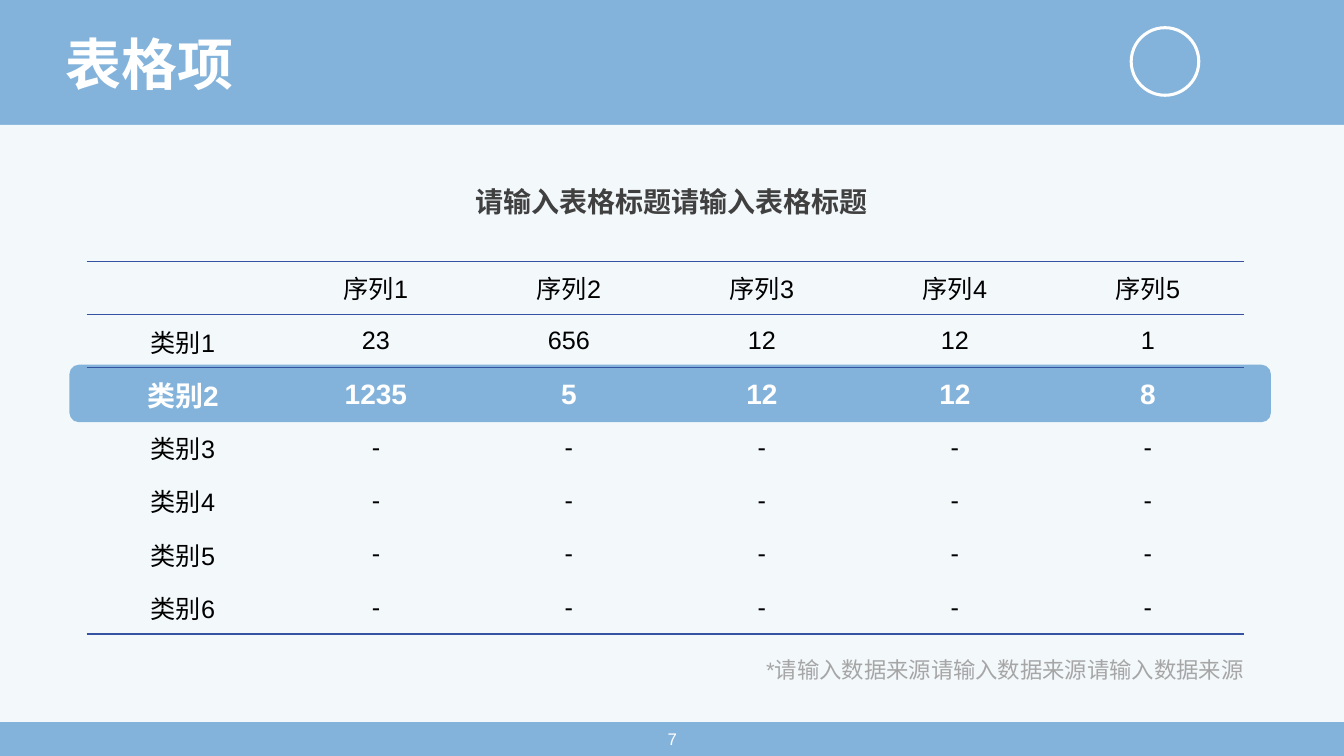
from lxml.etree import SubElement
from pptx import Presentation
from pptx.dml.color import RGBColor
from pptx.enum.shapes import MSO_SHAPE as Shape
from pptx.enum.text import MSO_ANCHOR as Anchor, PP_ALIGN as Align
from pptx.oxml.ns import qn
from pptx.util import Cm, Pt

BLUE = RGBColor(0x83, 0xB3, 0xDB)
RULE = RGBColor(0x35, 0x53, 0xA0)
WHITE = RGBColor(0xFF, 0xFF, 0xFF)
BLACK = RGBColor(0x00, 0x00, 0x00)
DARK_GRAY = RGBColor(0x40, 0x40, 0x40)
LIGHT_GRAY = RGBColor(0xA6, 0xA6, 0xA6)
LATIN_FONT = "Arial"
CHINESE_FONT = "Noto Sans CJK SC"
PLAIN_TABLE_STYLE = "{2D5ABB26-0587-4C30-8999-92F81FD0307C}"

HEADERS = [""] + [f"序列{number}" for number in range(1, 6)]
FILLED_ROWS = [
    ["类别1", "23", "656", "12", "12", "1"],
    ["类别2", "1235", "5", "12", "12", "8"],
]
EMPTY_ROWS = [[f"类别{number}"] + ["-"] * 5 for number in range(3, 7)]
ROWS = [HEADERS] + FILLED_ROWS + EMPTY_ROWS
HIGHLIGHT_ROW = 2


def place(shape, left, top, width, height):
    """Move and size a shape, in centimetres."""
    shape.left, shape.top = Cm(left), Cm(top)
    shape.width, shape.height = Cm(width), Cm(height)


def write(text_frame, text, size, color, align, bold=False, font_name=LATIN_FONT):
    """Fill a text frame with one formatted paragraph."""
    paragraph = text_frame.paragraphs[0]
    paragraph.text = text
    paragraph.alignment = align
    font = paragraph.font
    font.name, font.size, font.bold = font_name, Pt(size), bold
    font.color.rgb = color
    return paragraph


def add_title(slide, text):
    """Put the slide title in its placeholder."""
    title = slide.shapes.title
    place(title, 1.4, 0.86, 18.19, 1.65)
    title.text_frame.vertical_anchor = Anchor.MIDDLE
    paragraph = write(title.text_frame, text, 40, WHITE, Align.LEFT, True, CHINESE_FONT)
    paragraph.line_spacing = 0.9


def add_block(slide, kind, color, left, top, width, height):
    """Add a flat, unlined preset shape."""
    block = slide.shapes.add_shape(kind, Cm(left), Cm(top), Cm(width), Cm(height))
    block.shadow.inherit = False
    block.fill.solid()
    block.fill.fore_color.rgb = color
    block.line.fill.background()
    return block


def set_opacity(shape, percent):
    """Make a solid fill partly transparent."""
    color = shape.element.spPr.find(qn("a:solidFill"))[0]
    SubElement(color, qn("a:alpha"), val=str(percent * 1000))


def add_text(slide, text, box, size, color, align, bold=False):
    """Add a wrapped, vertically centred text box."""
    text_box = slide.shapes.add_textbox(0, 0, 0, 0)
    place(text_box, *box)
    text_box.text_frame.word_wrap = True
    text_box.text_frame.vertical_anchor = Anchor.MIDDLE
    write(text_box.text_frame, text, size, color, align, bold)


def add_border(cell, side):
    """Draw a one-point rule on one side of a cell."""
    properties = cell._tc.get_or_add_tcPr()
    line = SubElement(properties, qn(f"a:ln{side}"), w=str(Pt(1)))
    fill = SubElement(line, qn("a:solidFill"))
    SubElement(fill, qn("a:srgbClr"), val=str(RULE))


def add_data_table(slide, rows):
    """Add the ruled table with one emphasised row."""
    frame = slide.shapes.add_table(
        len(rows), len(rows[0]), Cm(2.18), Cm(6.58), Cm(29.18), Cm(9.4)
    )
    next(frame.element.iter(qn("a:tableStyleId"))).text = PLAIN_TABLE_STYLE
    table = frame.table
    table.first_row = table.horz_banding = False
    borders = {0: "TB", 1: "T", len(rows) - 1: "B"}
    for row_index, row in enumerate(rows):
        highlighted = row_index == HIGHLIGHT_ROW
        size, color = (20, WHITE) if highlighted else (18, BLACK)
        for column_index, text in enumerate(row):
            cell = table.cell(row_index, column_index)
            cell.vertical_anchor = Anchor.MIDDLE
            for side in borders.get(row_index, ""):
                add_border(cell, side)
            cell.fill.background()
            write(cell.text_frame, text, size, color, Align.CENTER, highlighted)


def main():
    """Build and save the table slide."""
    presentation = Presentation()
    presentation.slide_width, presentation.slide_height = Cm(33.87), Cm(19.05)
    slide = presentation.slides.add_slide(presentation.slide_layouts[5])
    slide.background.fill.solid()
    slide.background.fill.fore_color.rgb = BLUE

    panel = add_block(slide, Shape.RECTANGLE, WHITE, 0, 3.15, 33.87, 15.04)
    set_opacity(panel, 91)
    emblem = add_block(slide, Shape.DONUT, WHITE, 28.47, 0.66, 1.78, 1.78)
    emblem.adjustments[0] = 0.043

    add_title(slide, "表格项")
    add_block(slide, Shape.ROUNDED_RECTANGLE, BLUE, 1.75, 9.19, 30.28, 1.45)
    add_data_table(slide, ROWS)
    add_text(slide, "请输入表格标题请输入表格标题", (11.68, 4.52, 10.49, 1.12),
             20, DARK_GRAY, Align.CENTER, True)
    add_text(slide, "*请输入数据来源请输入数据来源请输入数据来源", (18.47, 16.41, 13.13, 0.94),
             16, LIGHT_GRAY, Align.RIGHT)
    add_text(slide, "7", (13.13, 18.21, 7.62, 0.81), 12, WHITE, Align.CENTER)
    presentation.save("out.pptx")


if __name__ == "__main__":
    main()
